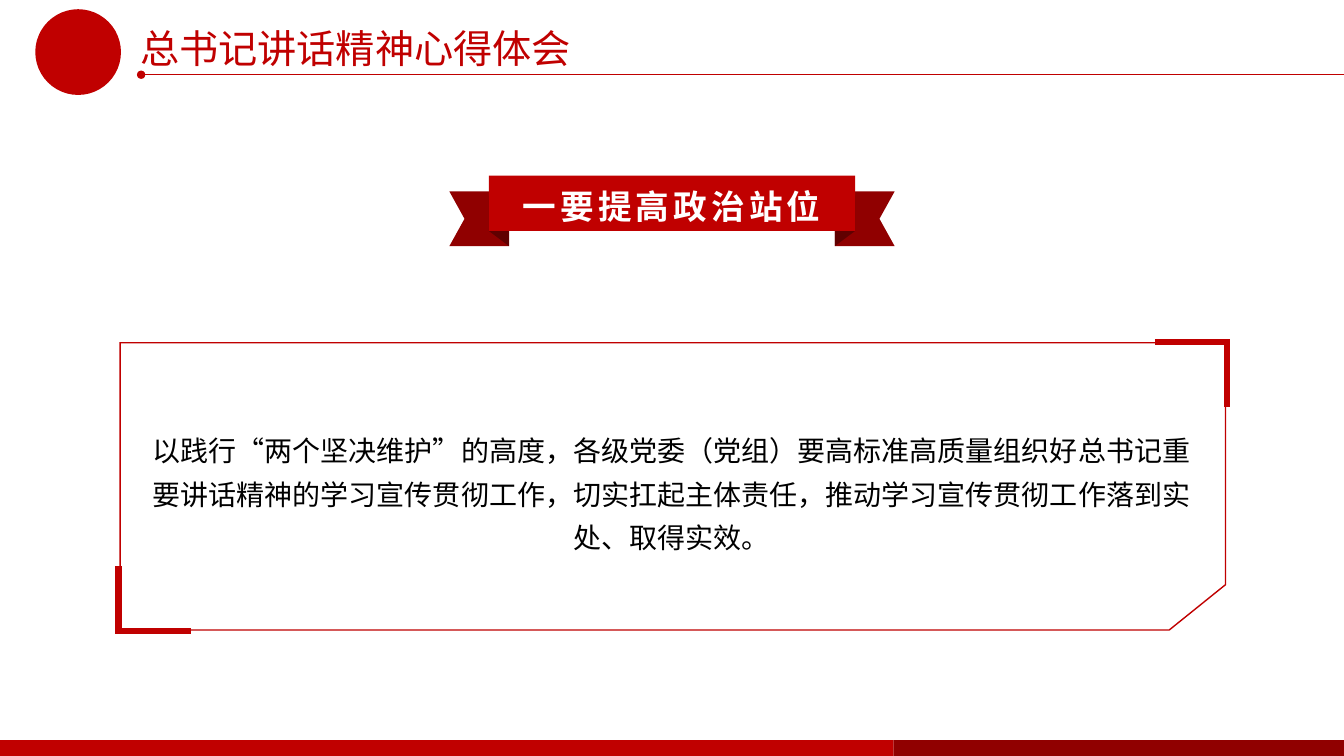
from dataclasses import dataclass

import pptx
import pptx.dml.color
import pptx.enum.shapes
import pptx.enum.text
import pptx.oxml
import pptx.oxml.ns
import pptx.util
from lxml import etree

COLUMNS, ROWS = 160, 90
CELL = pptx.util.Inches(7.5) // ROWS
ALIGN = pptx.enum.text.PP_ALIGN
SHAPE = pptx.enum.shapes.MSO_SHAPE


@dataclass(frozen=True)
class Theme:
    font: str = "Noto Sans CJK SC"
    red: str = "C00000"
    dark: str = "900000"
    fold: str = "600000"
    ink: str = "000000"
    white: str = "FFFFFF"
    title: int = 28
    banner: int = 24
    body: int = 20
    thin: float = 1
    thick: float = 4.5


THEME = Theme()


def cells(*values):
    return [round(value * CELL) for value in values]


def rgb(color):
    return pptx.dml.color.RGBColor.from_string(color)


def add_child(parent, tag, **attributes):
    return etree.SubElement(parent, pptx.oxml.ns.qn(tag), attributes)


def paint(sp, fill=None, line=None, width=THEME.thin):
    sp.shadow.inherit = False
    if fill:
        sp.fill.solid()
        sp.fill.fore_color.rgb = rgb(fill)
    else:
        sp.fill.background()
    if line:
        sp.line.color.rgb = rgb(line)
        sp.line.width = pptx.util.Pt(width)
        add_child(sp.line._get_or_add_ln(), "a:miter", lim="800000")
    else:
        sp.line.fill.background()


def add_block(s, kind, box, fill):
    paint(s.shapes.add_shape(kind, *cells(*box)), fill)


def add_outline(s, points, close=True, **style):
    start, *rest = [cells(*point) for point in points]
    builder = s.shapes.build_freeform(*start)
    builder.add_line_segments(rest, close=close)
    paint(builder.convert_to_shape(), **style)


def add_rule(s, x1, y1, x2, y2):
    rule = s.shapes.add_connector(
        pptx.enum.shapes.MSO_CONNECTOR.STRAIGHT, *cells(x1, y1, x2, y2))
    rule.line.color.rgb = rgb(THEME.red)
    rule.line.width = pptx.util.Pt(THEME.thin)
    add_child(rule.line._get_or_add_ln(), "a:headEnd", type="oval")
    add_child(rule._element.spPr, "a:effectLst")


def write(sp, text, size, color, align=ALIGN.CENTER, spacing=1.0, bold=False, tracking=0):
    tf = sp.text_frame
    tf.word_wrap = True
    tf.auto_size = pptx.enum.text.MSO_AUTO_SIZE.NONE
    tf.vertical_anchor = pptx.enum.text.MSO_ANCHOR.TOP
    p = tf.paragraphs[0]
    p.alignment = align
    p.line_spacing = spacing
    r = p.add_run()
    r.text = text
    r.font.name = THEME.font
    r.font.size = pptx.util.Pt(size)
    r.font.bold = bold
    r.font.color.rgb = rgb(color)
    properties = r._r.get_or_add_rPr()
    properties.set("lang", "zh-CN")
    if tracking:
        properties.set("spc", str(tracking * 100))
    add_child(properties, "a:ea", typeface=THEME.font)


def add_text(s, box, text, size, color, **style):
    write(s.shapes.add_textbox(*cells(*box)), text, size, color, **style)


def add_title(s, box, text):
    title = s.shapes.title
    title.left, title.top, title.width, title.height = cells(*box)
    write(title, text, THEME.title, THEME.red, align=ALIGN.LEFT)


def add_footer(s, top, split):
    height = ROWS - top
    add_block(s, SHAPE.RECTANGLE, (0, top, split, height), THEME.red)
    add_block(s, SHAPE.RECTANGLE, (split, top, COLUMNS - split, height), THEME.dark)


def add_frame(s, left, top, right, bottom):
    add_outline(s, [(left, top), (right, top), (right, bottom - 5.4),
                    (right - 6.7, bottom), (left, bottom)], line=THEME.red)
    corner = [(right - 8.4, top - 0.1), (right + 0.2, top - 0.1), (right + 0.2, top + 7.6)]
    opposite = [(left + right - x, top + bottom - y) for x, y in corner]
    for bracket in (corner, opposite):
        add_outline(s, bracket, close=False, line=THEME.red, width=THEME.thick)


def add_ribbon(s, text):
    tail = [(53.5, 22.8), (60.6, 22.8), (60.6, 29.3), (53.5, 29.3), (55.3, 26.05)]
    fold = [(58.2, 23.3), (60.6, 23.3), (60.6, 29.3), (58.2, 27.5)]
    for points, color in ((tail, THEME.dark), (fold, THEME.fold)):
        mirrored = [(COLUMNS - x, y) for x, y in points]
        for side in (points, mirrored):
            add_outline(s, side, fill=color)
    add_block(s, SHAPE.RECTANGLE, (58.2, 20.9, 43.6, 6.6), THEME.red)
    add_text(s, (60.7, 20.6, 38.5, 6.5), text, THEME.banner, THEME.white,
             spacing=1.2, bold=True, tracking=3)


def main():
    prs = pptx.Presentation()
    prs.slide_width, prs.slide_height = cells(COLUMNS, ROWS)
    s = prs.slides.add_slide(prs.slide_layouts[5])
    add_rule(s, 16.8, 8.9, COLUMNS, 8.9)
    add_block(s, SHAPE.OVAL, (4.2, 1.1, 10.2, 10.2), THEME.red)
    add_footer(s, 88.1, 106.4)
    add_title(s, (15.5, 2.3, 56.6, 6.9), "总书记讲话精神心得体会")
    add_text(s, (15.7, 49.8, 128.5, 16.4),
             "以践行“两个坚决维护”的高度，各级党委（党组）要高标准高质量组织好总书记"
             "重要讲话精神的学习宣传贯彻工作，切实扛起主体责任，推动学习宣传贯彻工作"
             "落到实处、取得实效。", THEME.body, THEME.ink, spacing=1.3)
    add_frame(s, 14.3, 40.8, 145.9, 75)
    add_ribbon(s, "一要提高政治站位")
    prs.save("out.pptx")


if __name__ == "__main__":
    main()
